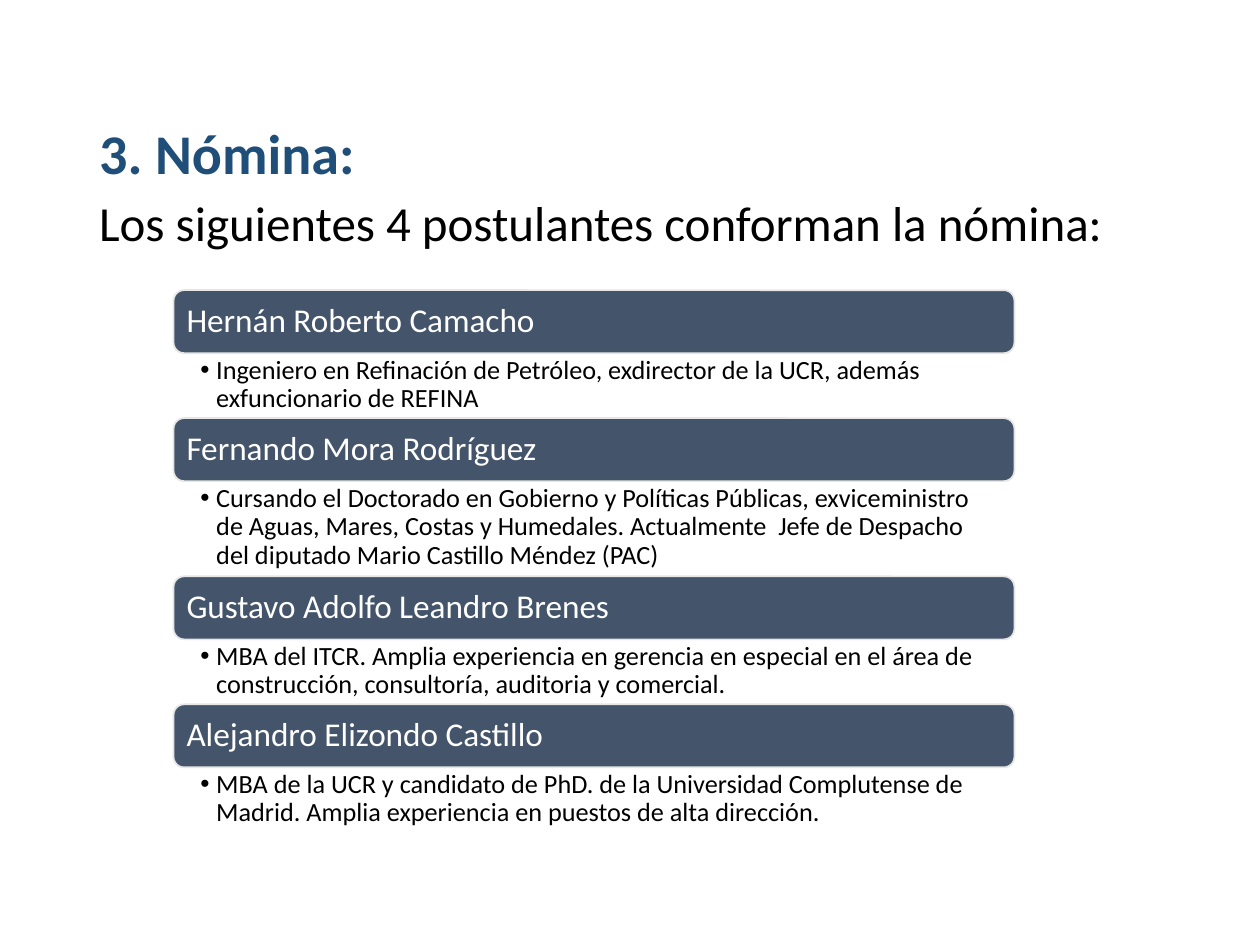
"""Build the slide that lists the four nominees with their profiles."""
from lxml.etree import SubElement
from pptx import Presentation
from pptx.dml.color import RGBColor
from pptx.enum.shapes import MSO_SHAPE as Shape
from pptx.enum.text import MSO_ANCHOR as Anchor, PP_ALIGN as Align
from pptx.oxml.ns import qn
from pptx.util import Cm, Pt

COLORS = {"title": "1F4E79", "text": "000000", "bar": "44546A",
          "edge": "E7E6E6", "name": "FFFFFF"}
LEFT, WIDTH, TOP = 3.5, 16.95, 5.85
BAR_HEIGHT = 1.27
TWO_LINES, THREE_LINES = 1.31, 1.92
NOMINEES = [
    ("Hernán Roberto Camacho", TWO_LINES,
     "Ingeniero en Refinación de Petróleo, exdirector de la UCR, además "
     "exfuncionario de REFINA"),
    ("Fernando Mora Rodríguez", THREE_LINES,
     "Cursando el Doctorado en Gobierno y Políticas Públicas, exviceministro "
     "de Aguas, Mares, Costas y Humedales. Actualmente  Jefe de Despacho "
     "del diputado Mario Castillo Méndez (PAC)"),
    ("Gustavo Adolfo Leandro Brenes", TWO_LINES,
     "MBA del ITCR. Amplia experiencia en gerencia en especial en el área de "
     "construcción, consultoría, auditoria y comercial."),
    ("Alejandro Elizondo Castillo", TWO_LINES,
     "MBA de la UCR y candidato de PhD. de la Universidad Complutense de "
     "Madrid. Amplia experiencia en puestos de alta dirección."),
]


def color(name):
    """Return the named colour."""
    return RGBColor.from_string(COLORS[name])


def apply(target, values):
    """Set each attribute in values on the target."""
    for name, value in values.items():
        setattr(target, name, value)


def write(box, text, size, ink, frame=None, spacing=0.9, bold=False):
    """Write one left-aligned paragraph in a box and return it."""
    apply(box.text_frame, {"word_wrap": True, **(frame or {})})
    para = box.text_frame.paragraphs[0]
    apply(para, {"alignment": Align.LEFT, "line_spacing": spacing})
    span = para.add_run()
    span.text = text
    apply(span.font, {"name": "Calibri", "size": Pt(size), "bold": bold})
    span.font.color.rgb = color(ink)
    return para


def add_text(page, place, *args, **options):
    """Add a text box at a place given in centimetres."""
    box = page.shapes.add_textbox(*map(Cm, place))
    return write(box, *args, **options)


def add_bar(page, top, name):
    """Add the rounded bar that carries a nominee's name."""
    bar = page.shapes.add_shape(Shape.ROUNDED_RECTANGLE, Cm(LEFT), Cm(top),
                                Cm(WIDTH), Cm(BAR_HEIGHT))
    bar.shadow.inherit = False
    bar.fill.solid()
    bar.fill.fore_color.rgb = color("bar")
    bar.line.color.rgb = color("edge")
    bar.line.width = Pt(1)
    margins = dict.fromkeys(("margin_left", "margin_right", "margin_top",
                             "margin_bottom"), Cm(0.2))
    write(bar, name, 19, "name", {"vertical_anchor": Anchor.MIDDLE, **margins})


def add_profile(page, top, height, profile):
    """Add the bulleted profile below a name bar."""
    frame = {"margin_left": Cm(0.54), "margin_right": Cm(0.38),
             "margin_top": Cm(0.07), "margin_bottom": Cm(0.07)}
    para = add_text(page, (LEFT, top, WIDTH, height), profile, 15, "text", frame)
    para.level = 1
    properties = para._p.get_or_add_pPr()
    properties.set("marL", str(Cm(0.32)))
    properties.set("indent", str(-Cm(0.32)))
    SubElement(properties, qn("a:buFont"), typeface="Arial")
    SubElement(properties, qn("a:buChar"), char="•")


def main():
    """Build and save the deck."""
    deck = Presentation()
    apply(deck, {"slide_width": Cm(25.4), "slide_height": Cm(19.05)})
    page = deck.slides.add_slide(deck.slide_layouts[6])
    add_text(page, (1.75, 3.89, 21.9, 1.5),
             "Los siguientes 4 postulantes conforman la nómina:", 28, "text")
    add_text(page, (1.75, 2.26, 17.15, 1.62), "3. Nómina:", 32, "title",
             spacing=1.0, bold=True)
    top = TOP
    for name, height, profile in NOMINEES:
        add_bar(page, top, name)
        add_profile(page, top + BAR_HEIGHT, height, profile)
        top += BAR_HEIGHT + height
    deck.save("out.pptx")


if __name__ == "__main__":
    main()
